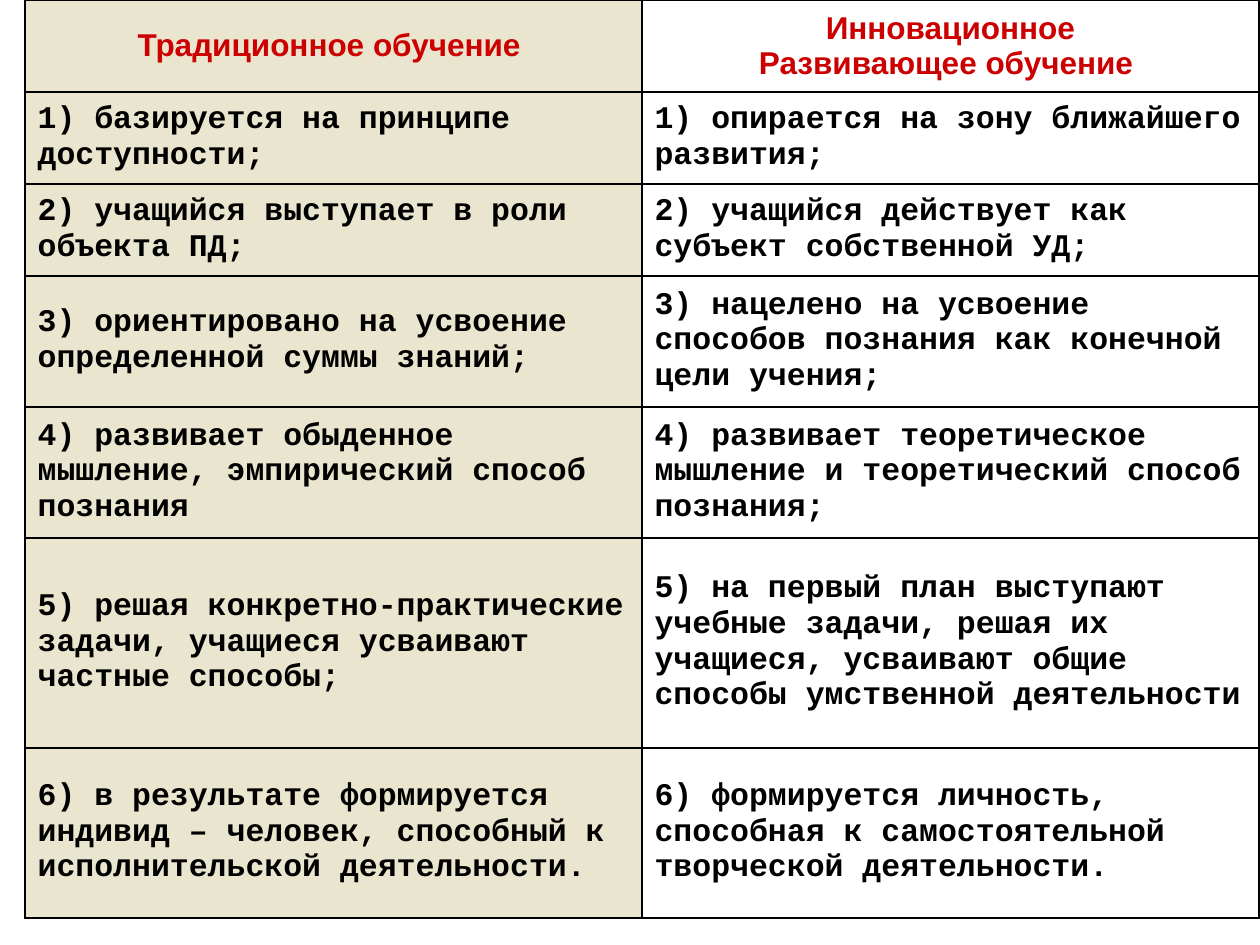
from typing import NamedTuple

from lxml import etree
from pptx import Presentation
from pptx import util as u
from pptx.dml.color import RGBColor
from pptx.enum import text
from pptx.oxml import ns

BLACK = RGBColor(0x00, 0x00, 0x00)
RED = RGBColor(0xCC, 0x00, 0x00)
SAND = RGBColor(0xEA, 0xE5, 0xCE)
WHITE = RGBColor(0xFF, 0xFF, 0xFF)

LEFT, TOP = 25, 0
COL = 617


class Row(NamedTuple):
    high: int
    old: str
    new: str


class Look(NamedTuple):
    font: str
    ink: RGBColor
    align: text.PP_ALIGN


HEAD = Look("Arial", RED, text.PP_ALIGN.CENTER)
BODY = Look("Courier New", BLACK, text.PP_ALIGN.LEFT)

ROWS = [
    Row(92, "Традиционное обучение ",
        "Инновационное\nРазвивающее обучение "),
    Row(92, "1) базируется на принципе доступности;",
        "1) опирается на зону ближайшего развития;"),
    Row(92, "2) учащийся выступает в роли объекта ПД;",
        "2) учащийся действует как субъект собственной УД;"),
    Row(131, "3) ориентировано на усвоение определенной суммы знаний;",
        "3) нацелено на усвоение способов познания как конечной цели учения;"),
    Row(131, "4) развивает обыденное мышление, эмпирический способ познания",
        "4) развивает теоретическое мышление и теоретический способ познания;"),
    Row(210, "5) решая конкретно-практические задачи, учащиеся усваивают "
        "частные способы;",
        "5) на первый план выступают учебные задачи, решая их учащиеся, "
        "усваивают общие способы умственной деятельности"),
    Row(170, "6) в результате формируется индивид – человек, способный к "
        "исполнительской деятельности.",
        "6) формируется личность, способная к самостоятельной творческой "
        "деятельности."),
]


def px(n: int) -> u.Emu:
    return u.Emu(round(n * 914400 / 126))


def edge(cell) -> None:
    """Rule all four sides of a cell; borders must come before its fill."""
    props = cell._tc.get_or_add_tcPr()
    for spot, side in enumerate(("lnL", "lnR", "lnT", "lnB")):
        line = etree.Element(ns.qn(f"a:{side}"), w=str(u.Pt(1)))
        fill = etree.SubElement(line, ns.qn("a:solidFill"))
        etree.SubElement(fill, ns.qn("a:srgbClr"), val=str(BLACK))
        props.insert(spot, line)


def write(cell, words: str, look: Look, fill: RGBColor) -> None:
    cell.fill.solid()
    cell.fill.fore_color.rgb = fill
    edge(cell)
    cell.vertical_anchor = text.MSO_ANCHOR.MIDDLE
    para = cell.text_frame.paragraphs[0]
    para.text = words
    para.alignment = look.align
    for run in para.runs:
        run.font.name = look.font
        run.font.size = u.Pt(18)
        run.font.bold = True
        run.font.color.rgb = look.ink


def draw(slide, rows: list[Row]) -> None:
    high = sum(row.high for row in rows)
    frame = slide.shapes.add_table(
        len(rows), 2, px(LEFT), px(TOP), px(2 * COL), px(high))
    table = frame.table
    table.first_row = table.horz_banding = False
    for col in table.columns:
        col.width = px(COL)
    for i, row in enumerate(rows):
        table.rows[i].height = px(row.high)
        look = BODY if i else HEAD
        write(table.cell(i, 0), row.old, look, SAND)
        write(table.cell(i, 1), row.new, look, WHITE)


def main() -> None:
    deck = Presentation()
    deck.slide_width, deck.slide_height = px(1260), px(945)
    draw(deck.slides.add_slide(deck.slide_layouts[6]), ROWS)
    deck.save("out.pptx")


if __name__ == "__main__":
    main()
